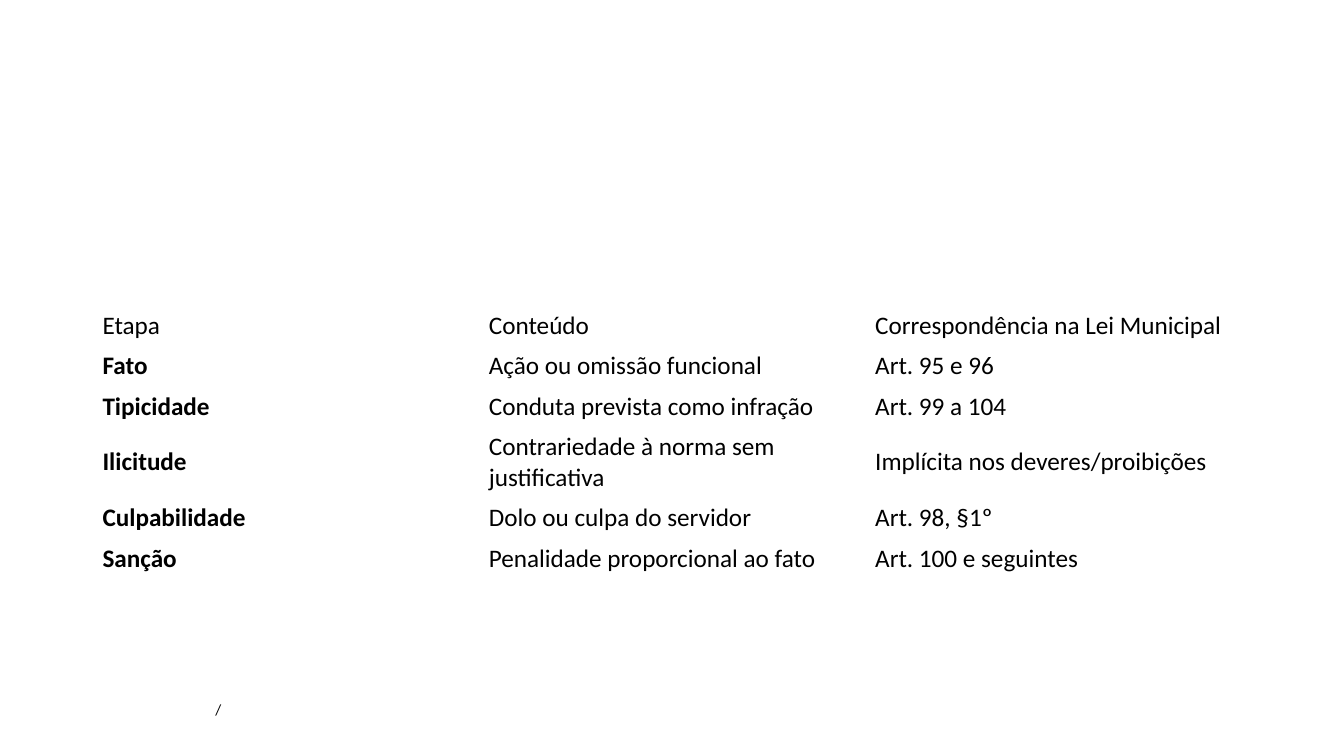
from dataclasses import dataclass

from pptx import Presentation
from pptx import util as u
from pptx.dml.color import RGBColor
from pptx.enum import text


@dataclass(frozen=True)
class Theme:
    font: str = "Calibri"
    ink: RGBColor = RGBColor(0, 0, 0)
    table_size: int = 18
    footer_size: int = 11


theme = Theme()


def write(frame, words, size, bold=False):
    """Put one line of themed text in a text frame."""
    paragraph = frame.paragraphs[0]
    run = paragraph.add_run()
    run.text = words
    values = {"name": theme.font, "size": u.Pt(size), "bold": bold}
    for name, value in values.items():
        setattr(run.font, name, value)
    run.font.color.rgb = theme.ink


presentation = Presentation()
presentation.slide_width = u.Cm(33.87)
presentation.slide_height = u.Cm(19.05)
slide = presentation.slides.add_slide(presentation.slide_layouts[6])

# Footer
footer = slide.shapes.add_textbox(u.Cm(5.18), u.Cm(17.53), u.Cm(23.5), u.Cm(0.74))
footer.text_frame.word_wrap = True
footer.text_frame.auto_size = text.MSO_AUTO_SIZE.SHAPE_TO_FIT_TEXT
write(footer.text_frame, "/", theme.footer_size)

# Table of stages
stages = [
    ("Etapa", "Conteúdo", "Correspondência na Lei Municipal"),
    ("Fato", "Ação ou omissão funcional", "Art. 95 e 96"),
    ("Tipicidade", "Conduta prevista como infração", "Art. 99 a 104"),
    ("Ilicitude", "Contrariedade à norma sem justificativa", "Implícita nos deveres/proibições"),
    ("Culpabilidade", "Dolo ou culpa do servidor", "Art. 98, §1º"),
    ("Sanção", "Penalidade proporcional ao fato", "Art. 100 e seguintes"),
]
row_height, tall_row_height = u.Cm(1.02), u.Cm(1.79)
heights = [tall_row_height if row[0] == "Ilicitude" else row_height for row in stages]

table = slide.shapes.add_table(
    len(stages), len(stages[0]), u.Cm(2.33), u.Cm(7.69), u.Cm(29.21), sum(heights)
).table
for name in ("first_row", "horz_banding"):
    setattr(table, name, False)

for row_index, (row, height) in enumerate(zip(stages, heights)):
    table.rows[row_index].height = height
    for column_index, words in enumerate(row):
        cell = table.cell(row_index, column_index)
        cell.fill.background()
        cell.vertical_anchor = text.MSO_ANCHOR.MIDDLE
        is_stage_name = row_index > 0 and column_index == 0
        write(cell.text_frame, words, theme.table_size, is_stage_name)

presentation.save("out.pptx")
